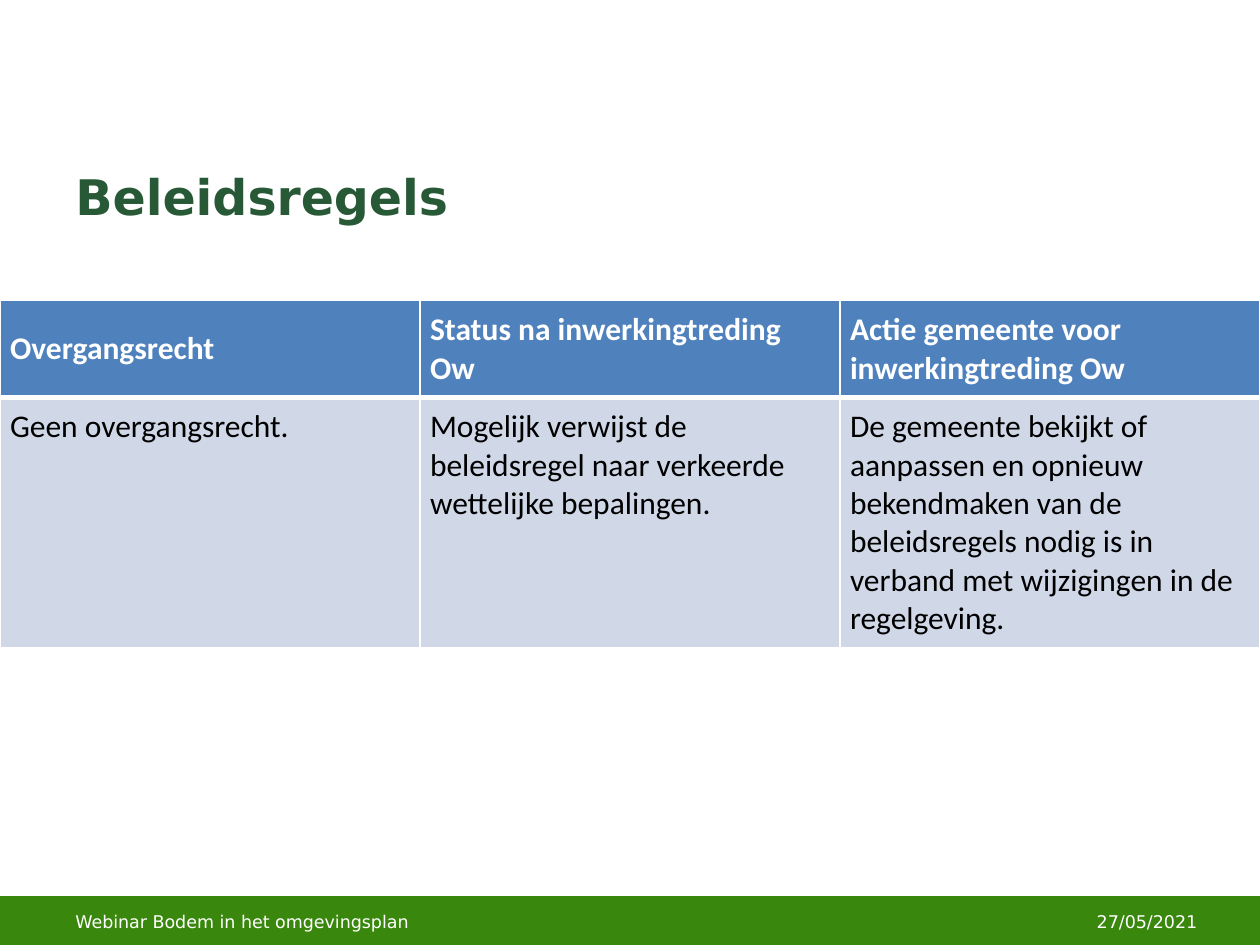
import pptx
import pptx.dml.color
import pptx.enum.shapes
import pptx.enum.text
import pptx.oxml
import pptx.oxml.ns
import pptx.util

WIDTH = pptx.util.Inches(10)
HEIGHT = pptx.util.Inches(7.5)
FOOTER_TOP = 0.95
FOOTER_HEIGHT = 0.05
HEADING_FONT = "DejaVu Sans"
ANCHOR = pptx.enum.text.MSO_ANCHOR
ALIGN = pptx.enum.text.PP_ALIGN

HEADERS = [
    "Overgangsrecht",
    "Status na inwerkingtreding Ow",
    "Actie gemeente voor inwerkingtreding Ow",
]
POLICY_RULES = [
    "Geen overgangsrecht.",
    "Mogelijk verwijst de beleidsregel naar verkeerde wettelijke bepalingen.",
    "De gemeente bekijkt of aanpassen en opnieuw bekendmaken van de beleidsregels "
    "nodig is in verband met wijzigingen in de regelgeving.",
]


def set_color(color_format, value):
    color_format.rgb = pptx.dml.color.RGBColor.from_string(value)


def place(left, top, width, height):
    return [round(share * length) for share, length in
            zip((left, top, width, height), (WIDTH, HEIGHT, WIDTH, HEIGHT))]


def write_run(paragraph, text, size, font, color, bold=False):
    run = paragraph.add_run()
    run.text = text
    run.font.size = pptx.util.Pt(size)
    run.font.name = font
    run.font.bold = bold
    set_color(run.font.color, color)


def add_text(slide, area, text, size, color, bold=False,
             anchor=ANCHOR.MIDDLE, align=ALIGN.LEFT):
    frame = slide.shapes.add_textbox(*place(*area)).text_frame
    frame.word_wrap = True
    frame.vertical_anchor = anchor
    paragraph = frame.paragraphs[0]
    paragraph.alignment = align
    write_run(paragraph, text, size, HEADING_FONT, color, bold)


def add_footer_bar(slide):
    shape = slide.shapes.add_shape(
        pptx.enum.shapes.MSO_SHAPE.RECTANGLE,
        *place(0, FOOTER_TOP, 1, FOOTER_HEIGHT))
    shape.shadow.inherit = False
    shape.fill.solid()
    set_color(shape.fill.fore_color, "39870C")
    set_color(shape.line.color, "39870C")
    shape.line.width = pptx.util.Pt(2)


def add_border(cell, side, points):
    namespace = pptx.oxml.ns.nsdecls("a")
    cell._tc.get_or_add_tcPr().append(pptx.oxml.parse_xml(
        f'<a:ln{side} {namespace} w="{pptx.util.Pt(points)}"><a:solidFill>'
        f'<a:srgbClr val="FFFFFF"/></a:solidFill></a:ln{side}>'))


def fill_cell(cell, text, fill, color, bold, anchor, top_border, bottom_border):
    for side, points in zip("LRTB", (1, 1, top_border, bottom_border)):
        add_border(cell, side, points)
    cell.fill.solid()
    set_color(cell.fill.fore_color, fill)
    cell.vertical_anchor = anchor
    margin = pptx.util.Inches(0.08)
    cell.margin_left = cell.margin_right = margin
    cell.margin_top = cell.margin_bottom = margin
    write_run(cell.text_frame.paragraphs[0], text, 18, "Calibri", color, bold)


def add_policy_table(slide):
    table = slide.shapes.add_table(
        2, len(HEADERS), *place(0, 0.318, 1, 0.368)).table
    table.horz_banding = False
    for row, height in zip(table.rows, (0.77, 1.99)):
        row.height = pptx.util.Inches(height)
    for column, (header, rule) in enumerate(zip(HEADERS, POLICY_RULES)):
        table.columns[column].width = round(WIDTH / len(HEADERS))
        fill_cell(table.cell(0, column), header, "4F81BD", "FFFFFF", True,
                  ANCHOR.MIDDLE, 1, 3)
        fill_cell(table.cell(1, column), rule, "D0D8E8", "000000", False,
                  ANCHOR.TOP, 3, 1)


def main():
    presentation = pptx.Presentation()
    presentation.slide_width = WIDTH
    presentation.slide_height = HEIGHT
    slide = presentation.slides.add_slide(presentation.slide_layouts[6])
    add_footer_bar(slide)
    add_text(slide, (0.05, 0.17, 0.9, 0.1), "Beleidsregels", 28, "275937",
             bold=True, anchor=ANCHOR.TOP)
    add_text(slide, (0.73, FOOTER_TOP, 0.23, FOOTER_HEIGHT), "27/05/2021",
             10, "FFFFFF", align=ALIGN.RIGHT)
    add_text(slide, (0.05, FOOTER_TOP, 0.32, FOOTER_HEIGHT),
             "Webinar Bodem in het omgevingsplan", 10, "FFFFFF")
    add_policy_table(slide)
    presentation.save("out.pptx")


if __name__ == "__main__":
    main()
